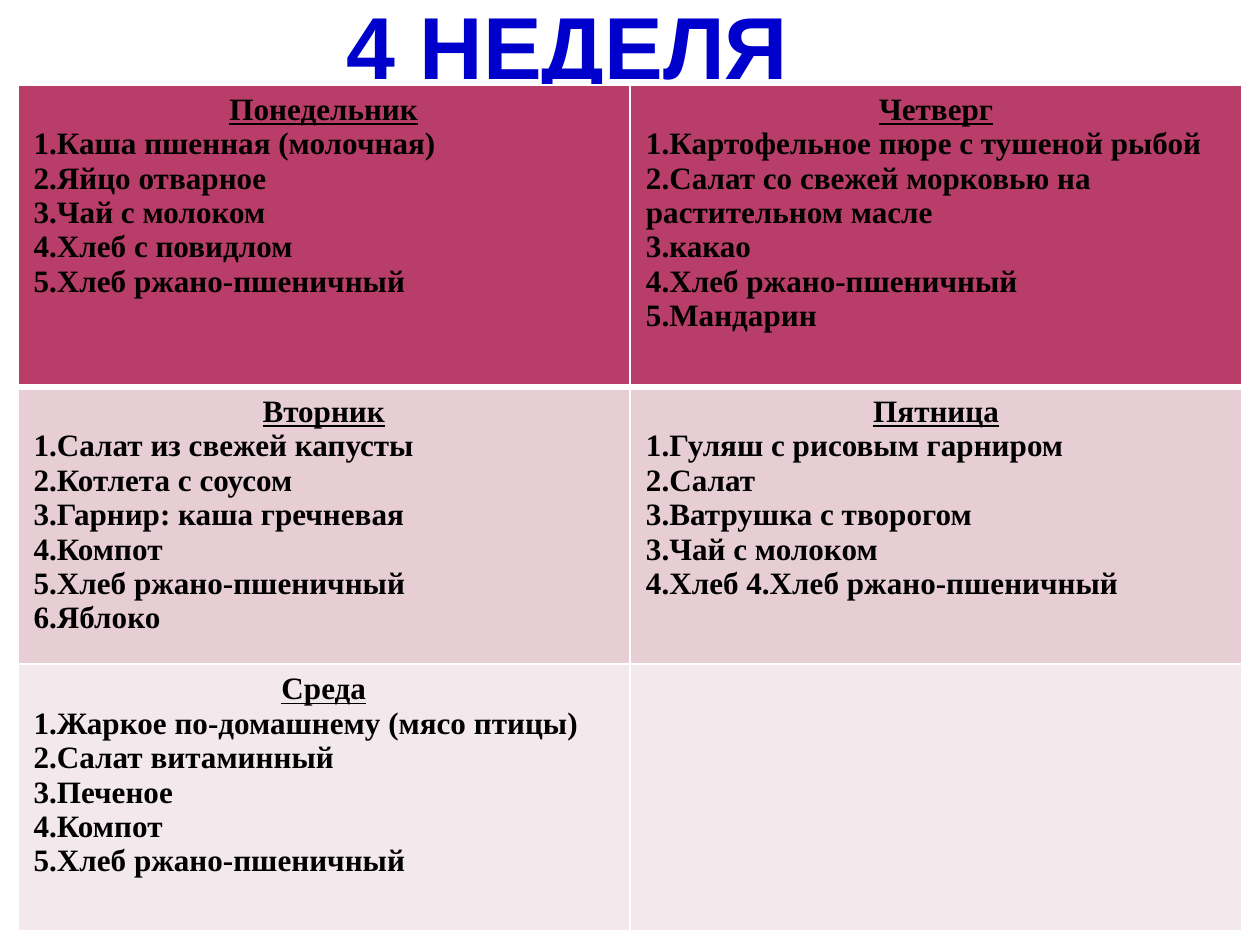
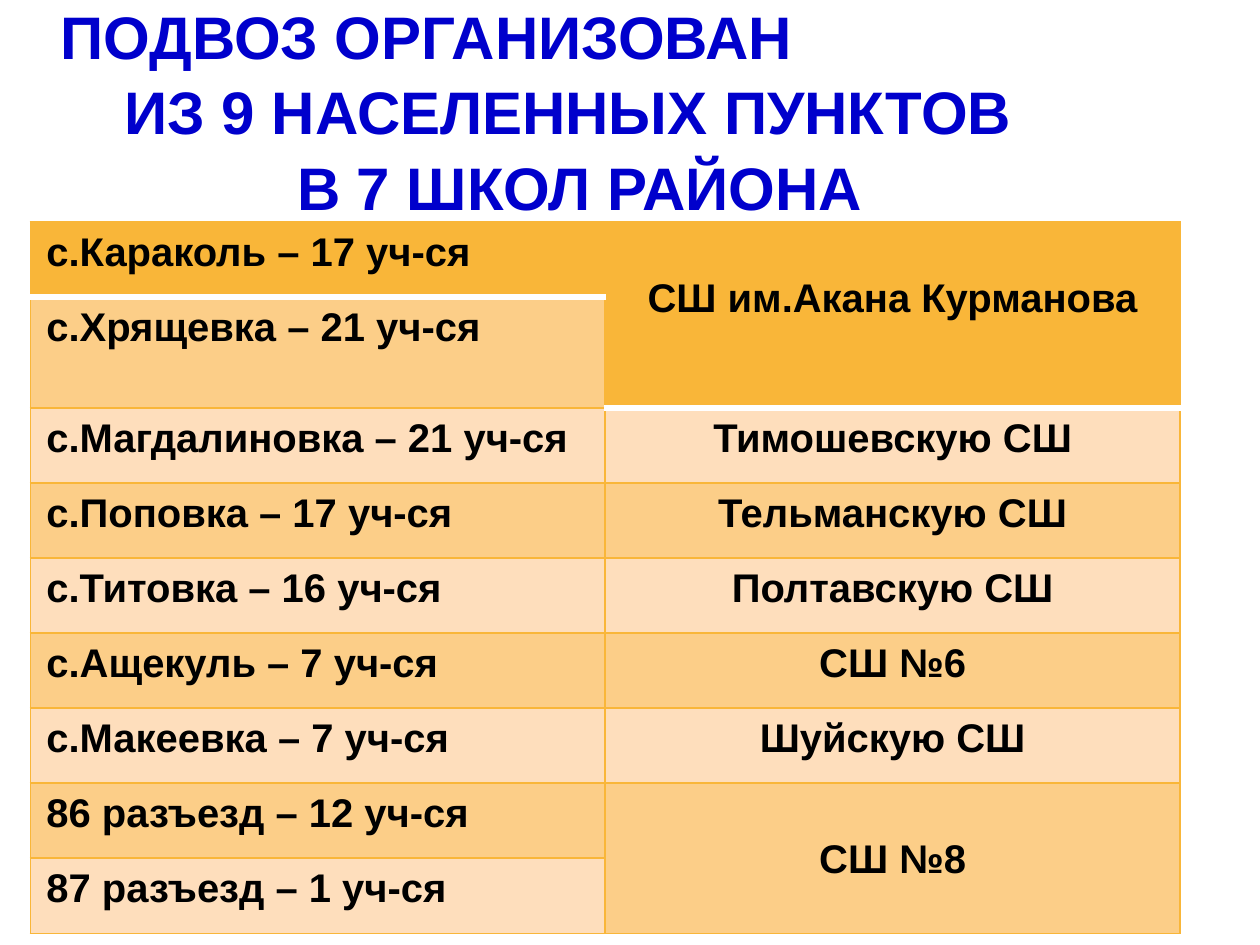
import pptx
import pptx.util
import pptx.dml.color
import pptx.enum.text
from lxml import etree

Inches = pptx.util.Inches
Pt = pptx.util.Pt
ALIGN = pptx.enum.text.PP_ALIGN
ANCHOR = pptx.enum.text.MSO_ANCHOR
A = "http://schemas.openxmlformats.org/drawingml/2006/main"

# Shared style
BLUE, BLACK, WHITE = "0000CC", "000000", "FFFFFF"
ORANGE, ORANGE_MID, ORANGE_LIGHT = "F9B639", "FCCE88", "FEDEBC"
BERRY, BERRY_MID, BERRY_LIGHT = "B83D68", "E6CED4", "F3E8EB"


def write(para, text, size, font, color, align, underline=False):
    para.alignment = align
    span = para.add_run()
    span.text = text
    span.font.size = Pt(size)
    span.font.name = font
    span.font.bold = True
    span.font.underline = underline
    span.font.color.rgb = pptx.dml.color.RGBColor.from_string(color)


def paint_cell(cell, fill, edges):
    """Edges maps L, R, T, B to (colour, width in points)."""
    properties = cell._tc.get_or_add_tcPr()
    for side in "LRTB":
        color, width = edges[side]
        line = etree.SubElement(properties, f"{{{A}}}ln{side}", w=str(Pt(width)))
        solid = etree.SubElement(line, f"{{{A}}}solidFill")
        etree.SubElement(solid, f"{{{A}}}srgbClr", val=color)
    cell.fill.solid()
    cell.fill.fore_color.rgb = pptx.dml.color.RGBColor.from_string(fill)


deck = pptx.Presentation()
deck.slide_width, deck.slide_height = Inches(7.88), Inches(5.91)

# Content: weekly menu, row by row
menu = [
    [["Понедельник", "1.Каша пшенная (молочная)", "2.Яйцо отварное", "3.Чай с молоком",
      "4.Хлеб с повидлом", "5.Хлеб ржано-пшеничный"],
     ["Четверг", "1.Картофельное пюре с тушеной рыбой",
      "2.Салат со свежей морковью на растительном масле", "3.какао",
      "4.Хлеб ржано-пшеничный", "5.Мандарин"]],
    [["Вторник", "1.Салат из свежей капусты", "2.Котлета с соусом",
      "3.Гарнир: каша гречневая", "4.Компот", "5.Хлеб ржано-пшеничный", "6.Яблоко"],
     ["Пятница", "1.Гуляш с рисовым гарниром", "2.Салат", "3.Ватрушка с творогом",
      "3.Чай с молоком", "4.Хлеб 4.Хлеб ржано-пшеничный"]],
    [["Среда", "1.Жаркое по-домашнему (мясо птицы)", "2.Салат витаминный", "3.Печеное",
      "4.Компот", "5.Хлеб ржано-пшеничный"],
     []],
]

# Content: villages and the schools they travel to (None continues a merged cell)
routes = [
    ("с.Караколь – 17 уч-ся", "СШ им.Акана Курманова"),
    ("с.Хрящевка – 21 уч-ся", None),
    ("с.Магдалиновка – 21 уч-ся", "Тимошевскую СШ"),
    ("с.Поповка – 17 уч-ся", "Тельманскую СШ"),
    ("с.Титовка – 16 уч-ся", "Полтавскую СШ"),
    ("с.Ащекуль – 7 уч-ся", "СШ №6"),
    ("с.Макеевка – 7 уч-ся", "Шуйскую СШ"),
    ("86 разъезд – 12 уч-ся", "СШ №8"),
    ("87 разъезд – 1 уч-ся", None),
]

# Each title line: text, left indent (None means centred)
pages = [
    {"title_at": (0.11, 0, 6.88, 0.61), "size": 39.6, "spacing": 1.0,
     "lines": [("4 НЕДЕЛЯ", None)],
     "table_at": (0.11, 0.53), "column": 3.83, "rows": [1.89, 1.67, 1.67]},
    {"title_at": (0.11, 0.14, 7.03, 1.25), "size": 27, "spacing": 1.05,
     "lines": [("ПОДВОЗ ОРГАНИЗОВАН", 0.23), ("ИЗ 9 НАСЕЛЕННЫХ ПУНКТОВ", 0.63),
               ("В 7 ШКОЛ РАЙОНА", None)],
     "table_at": (0.19, 1.39), "column": 3.595, "rows": [0.47, 0.66] + [0.47] * 7},
]

# Titles and empty tables
tables = []
for layout in pages:
    page = deck.slides.add_slide(deck.slide_layouts[6])
    box = page.shapes.add_textbox(*map(Inches, layout["title_at"]))
    frame = box.text_frame
    frame.word_wrap = True
    frame.vertical_anchor = ANCHOR.BOTTOM
    frame.margin_left = frame.margin_right = Inches(0.04)
    frame.margin_top = frame.margin_bottom = 0
    for index, (text, indent) in enumerate(layout["lines"]):
        para = frame.add_paragraph() if index else frame.paragraphs[0]
        para.line_spacing = layout["spacing"]
        if indent is not None:
            para._p.get_or_add_pPr().set("marL", str(Inches(indent)))
        write(para, text, layout["size"], "Arial", BLUE,
              ALIGN.CENTER if indent is None else ALIGN.LEFT)

    left, top = layout["table_at"]
    heights = layout["rows"]
    table = page.shapes.add_table(
        len(heights), 2, Inches(left), Inches(top),
        Inches(2 * layout["column"]), Inches(sum(heights))).table
    table.first_row = table.horz_banding = False
    for column in table.columns:
        column.width = Inches(layout["column"])
    for row, height in zip(table.rows, heights):
        row.height = Inches(height)
    tables.append(table)

menu_table, route_table = tables

# Menu table
for r, (days, fill) in enumerate(zip(menu, (BERRY, BERRY_MID, BERRY_LIGHT))):
    for c, dishes in enumerate(days):
        cell = menu_table.cell(r, c)
        edges = dict.fromkeys("LRTB", (WHITE, 1))
        if r < 2:
            edges["B" if r == 0 else "T"] = (WHITE, 3)
        paint_cell(cell, fill, edges)
        for index, text in enumerate(dishes):
            para = cell.text_frame.add_paragraph() if index else cell.text_frame.paragraphs[0]
            write(para, text, 14, "Times New Roman", BLACK,
                  ALIGN.LEFT if index else ALIGN.CENTER, underline=index == 0)

# Route table: the header ends after one row on the left, two on the right
for c, header_rows in enumerate((1, 2)):
    for r, route in enumerate(routes):
        cell = route_table.cell(r, c)
        edges = dict.fromkeys("LRTB", (ORANGE, 0.9))
        if r == header_rows - 1:
            edges["B"] = (WHITE, 3.15)
        if r == header_rows:
            edges["T"] = (WHITE, 3.15)
        if c == 1 and r == 0:
            edges["B"] = (WHITE, 3.15)
        fill = ORANGE if r < header_rows else (ORANGE_MID if r % 2 else ORANGE_LIGHT)
        paint_cell(cell, fill, edges)
        if route[c]:
            write(cell.text_frame.paragraphs[0], route[c], 18, "Arial", BLACK,
                  ALIGN.CENTER if c else ALIGN.LEFT)

for r, (_, school) in enumerate(routes):
    if school is None:
        merged = route_table.cell(r - 1, 1)
        merged.merge(route_table.cell(r, 1))
        merged.margin_top = Inches(0.34)

deck.save("out.pptx")
